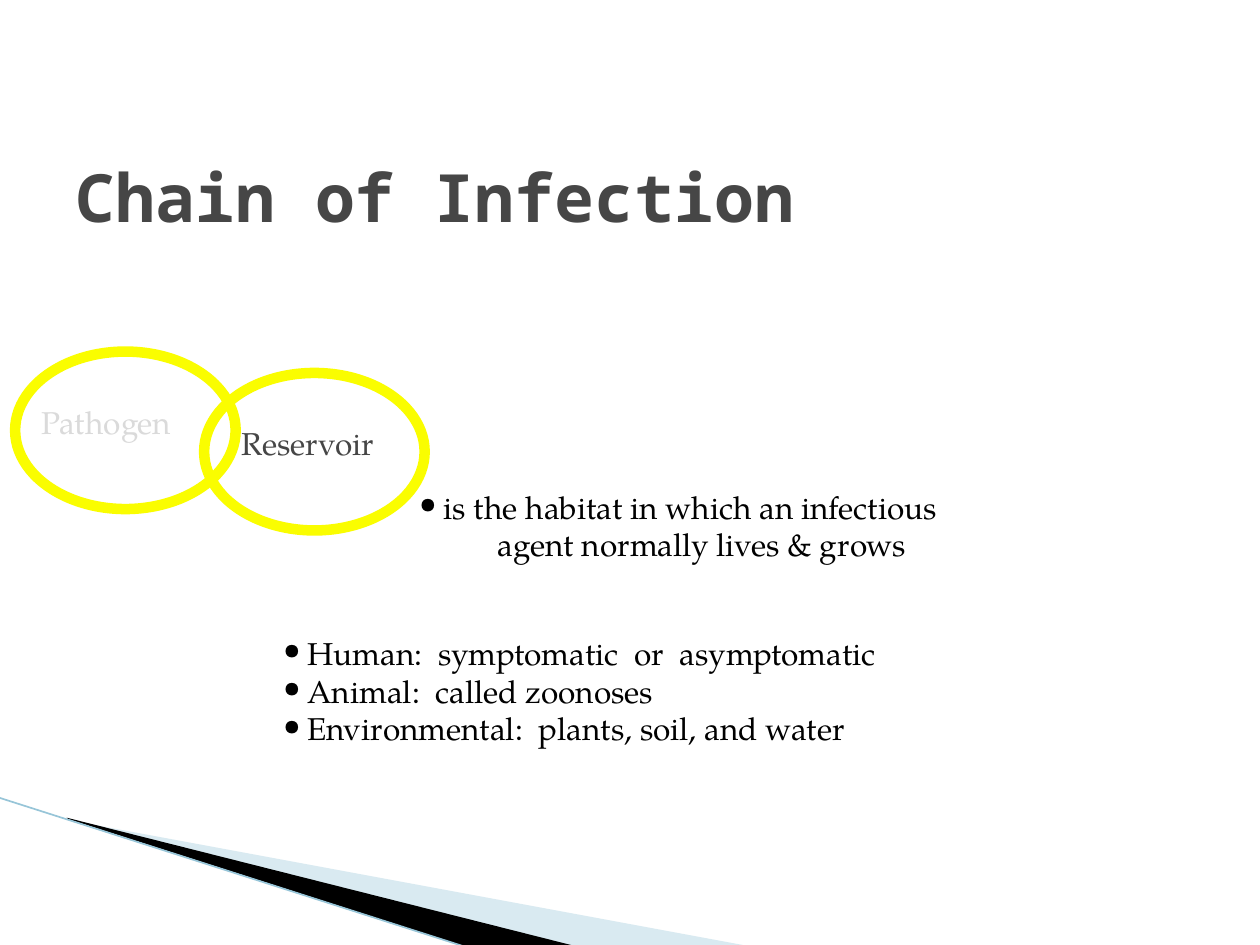
import pptx
import pptx.dml.color
import pptx.enum.shapes
import pptx.enum.text
import pptx.oxml
import pptx.oxml.ns
import pptx.util
from dataclasses import dataclass

Inches = pptx.util.Inches
Pt = pptx.util.Pt
RGB = pptx.dml.color.RGBColor.from_string
qn = pptx.oxml.ns.qn


@dataclass(frozen=True)
class Theme:
    title_font: str = "Noto Sans Mono"
    body_font: str = "TeX Gyre Pagella"
    title_size: float = 38
    body_size: float = 18
    heading: str = "464646"
    body: str = "000000"
    faded: str = "DADADA"
    ring: str = "FAFD00"
    ring_width: float = 6
    pale_wedge: str = "A0CBDC"
    dark_wedge: str = "000000"
    edge: str = "97C5D8"


theme = Theme()
BULLET_INDENT = 0.19
CONTINUATION_INDENT = 0.62


def fill_frame(shape, box, lines, style, anchor="TOP"):
    """Place a text shape and write lines of (text, left indent, has bullet)."""
    shape.left, shape.top, shape.width, shape.height = map(Inches, box)
    frame = shape.text_frame
    frame.word_wrap = True
    frame.auto_size = pptx.enum.text.MSO_AUTO_SIZE.NONE
    frame.vertical_anchor = pptx.enum.text.MSO_ANCHOR[anchor]
    frame.text = "\n".join(text for text, _, _ in lines)
    for paragraph, (_, indent, bulleted) in zip(frame.paragraphs, lines):
        properties = paragraph._p.get_or_add_pPr()
        properties.set("marL", str(Inches(indent)))
        properties.set("indent", str(-Inches(indent) if bulleted else 0))
        if bulleted:
            bullet_font = pptx.oxml.ns.nsdecls("a")
            properties.append(pptx.oxml.parse_xml(
                f'<a:buFont {bullet_font} typeface="{theme.body_font}"/>'))
            properties.append(pptx.oxml.parse_xml(
                f'<a:buChar {bullet_font} char="•"/>'))
        else:
            properties.append(properties.makeelement(qn("a:buNone"), {}))
        paragraph.alignment = pptx.enum.text.PP_ALIGN.LEFT
        paragraph.space_before = Pt(0)
        for name, value in style.items():
            if name == "color":
                paragraph.font.color.rgb = RGB(value)
            else:
                setattr(paragraph.font, name, value)


presentation = pptx.Presentation()
presentation.slide_width = Inches(10)
presentation.slide_height = Inches(7.5)
slide = presentation.slides.add_slide(presentation.slide_layouts[3])
title, definition, reservoir_kinds = list(slide.placeholders)[:3]

# Corner decoration
wedges = [
    ([(0.55, 6.51), (5.95, 7.51), (4.56, 7.51), (0.55, 6.5)], theme.pale_wedge, 40),
    ([(0.53, 6.49), (4.57, 7.51), (3.72, 7.52), (0.54, 6.5)], theme.dark_wedge, 100),
]
for points, color, opacity in wedges:
    start, *corners = [(Inches(x), Inches(y)) for x, y in points]
    builder = slide.shapes.build_freeform(*start)
    builder.add_line_segments(corners, close=True)
    wedge = builder.convert_to_shape()
    wedge.shadow.inherit = False
    wedge.fill.solid()
    wedge.fill.fore_color.rgb = RGB(color)
    wedge.line.fill.background()
    if opacity < 100:
        color_element = wedge._element.spPr.find(qn("a:solidFill"))[0]
        alpha = color_element.makeelement(qn("a:alpha"), {"val": str(opacity * 1000)})
        color_element.append(alpha)

edge = slide.shapes.add_connector(
    pptx.enum.shapes.MSO_CONNECTOR.STRAIGHT,
    Inches(-0.01), Inches(6.33), Inches(3.71), Inches(7.52))
edge.line.color.rgb = RGB(theme.edge)
edge.line.width = Pt(0.95)
edge_properties = edge._element.spPr
edge_properties.append(edge_properties.makeelement(qn("a:effectLst"), {}))

# Title and lists
title_style = dict(name=theme.title_font, size=Pt(theme.title_size), bold=True,
                   color=theme.heading)
body_style = dict(name=theme.body_font, size=Pt(theme.body_size), color=theme.body)
fill_frame(title, (0.5, 1, 8.5, 0.92), [("Chain of Infection", 0, False)],
           title_style, "BOTTOM")
fill_frame(definition, (3.23, 3.82, 5.8, 0.9), [
    ("is the habitat in which an infectious", BULLET_INDENT, True),
    ("agent normally lives & grows", CONTINUATION_INDENT, False),
], body_style)
fill_frame(reservoir_kinds, (2.15, 4.98, 6.54, 1.3), [
    (text, BULLET_INDENT, True) for text in (
        "Human:  symptomatic  or  asymptomatic",
        "Animal:  called zoonoses",
        "Environmental:  plants, soil, and water")
], body_style)

# Links of the chain
links = [
    ("Pathogen", (0.12, 2.79), (0.23, 3.15, 1.44, 0.5), theme.faded),
    ("Reservoir", (1.62, 2.96), (1.82, 3.32, 1.49, 0.5), theme.heading),
]
for label, (left, top), label_box, color in links:
    ring = slide.shapes.add_shape(
        pptx.enum.shapes.MSO_SHAPE.OVAL,
        Inches(left), Inches(top), Inches(1.75), Inches(1.25))
    ring.shadow.inherit = False
    ring.fill.background()
    ring.line.color.rgb = RGB(theme.ring)
    ring.line.width = Pt(theme.ring_width)
    caption = slide.shapes.add_textbox(*map(Inches, label_box))
    fill_frame(caption, label_box, [(label, 0, False)], {**body_style, "color": color})

presentation.save("out.pptx")
